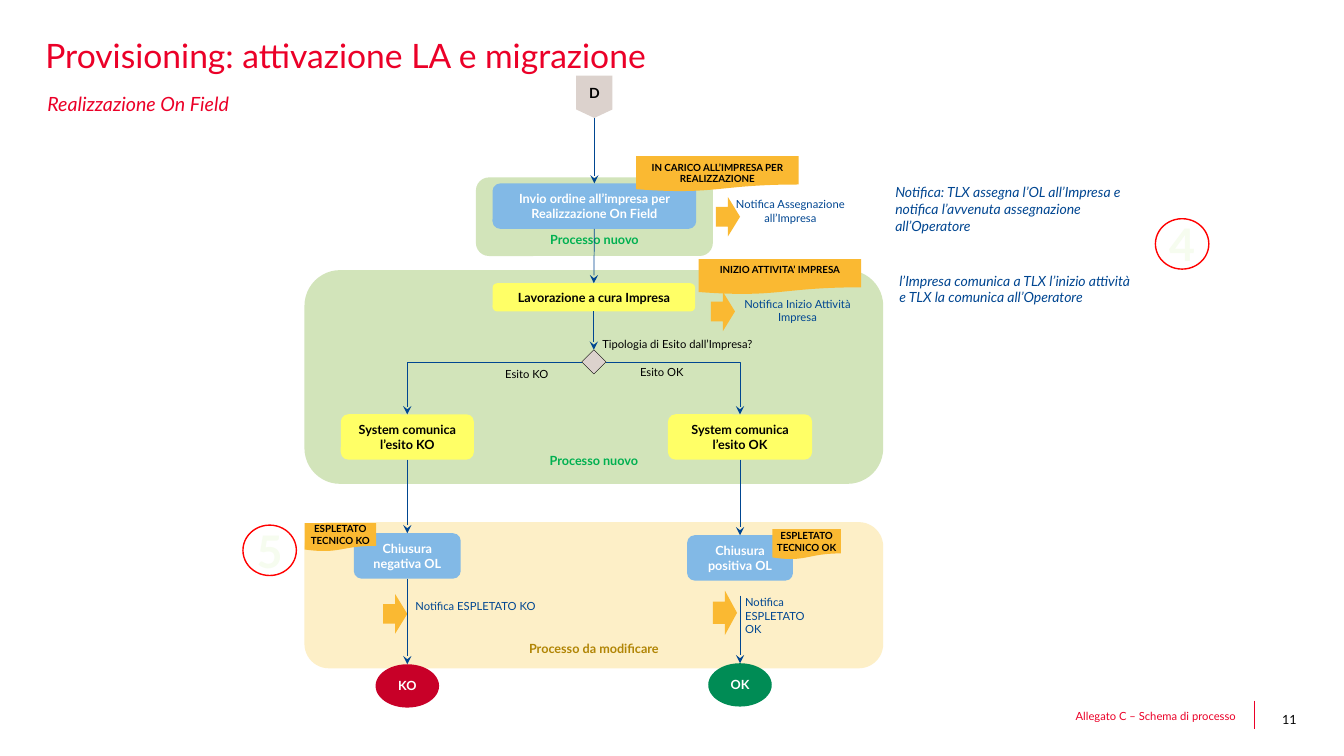
from collections import namedtuple
from lxml import etree
from pptx import Presentation
from pptx.dml.color import RGBColor
from pptx.enum.shapes import MSO_CONNECTOR, MSO_SHAPE
from pptx.enum.text import MSO_ANCHOR, PP_ALIGN
from pptx.oxml.ns import qn
from pptx.util import Inches, Pt

RED = RGBColor(0xEB, 0x00, 0x28)
DARK_RED = RGBColor(0xC8, 0x00, 0x28)
RING_RED = RGBColor(0xFF, 0x00, 0x00)
NAVY = RGBColor(0x00, 0x46, 0x91)
SKY = RGBColor(0x82, 0xB9, 0xE6)
YELLOW = RGBColor(0xFF, 0xFF, 0x66)
ORANGE = RGBColor(0xFA, 0xB9, 0x32)
SAND = RGBColor(0xFD, 0xEF, 0xC7)
OCHRE = RGBColor(0xB1, 0x85, 0x05)
PALE_GREEN = RGBColor(0xD2, 0xE4, 0xBA)
MINT = RGBColor(0xF6, 0xFC, 0xEF)
GREEN = RGBColor(0x00, 0xB0, 0x50)
DARK_GREEN = RGBColor(0x00, 0x8C, 0x55)
STONE = RGBColor(0xDC, 0xD2, 0xCD)
BLACK = RGBColor(0x00, 0x00, 0x00)
WHITE = RGBColor(0xFF, 0xFF, 0xFF)

FONT = "Lato"
TOP, LEFT, BOTTOM, RIGHT = range(4)
KO_AXIS, MAIN_AXIS, OK_AXIS = 1.02, 2.87, 4.32
Box = namedtuple("Box", "left top width height")


def write(shape, text, size, color, align=PP_ALIGN.CENTER, bold=False, italic=False,
          anchor=MSO_ANCHOR.MIDDLE, margins=(0.1, 0.05), wrap=True):
    frame = shape.text_frame
    frame.text = text
    frame.word_wrap = wrap
    frame.vertical_anchor = anchor
    frame.margin_left = frame.margin_right = Inches(margins[0])
    frame.margin_top = frame.margin_bottom = Inches(margins[1])
    for para in frame.paragraphs:
        para.alignment = align
        for span in para.runs:
            span.font.name = FONT
            span.font.size = Pt(size)
            span.font.bold = bold
            span.font.italic = italic
            span.font.color.rgb = color


def add_label(page, box, text, size, color, align=PP_ALIGN.LEFT, italic=False):
    label = page.shapes.add_textbox(*map(Inches, box))
    write(label, text, size, color, align, italic=italic, anchor=MSO_ANCHOR.TOP, margins=(0, 0))
    return label


def add_figure(page, kind, box, fill=None):
    figure = page.shapes.add_shape(kind, *map(Inches, box))
    figure.shadow.inherit = False
    figure.line.fill.background()
    if fill is None:
        figure.fill.background()
    else:
        figure.fill.solid()
        figure.fill.fore_color.rgb = fill
    return figure


def add_node(page, axis, top, width, height, text, fill, color, kind=MSO_SHAPE.ROUNDED_RECTANGLE, size=9):
    node = add_figure(page, kind, (axis - width / 2, top, width, height), fill)
    write(node, text, size, color, bold=True)
    return node


def add_band(page, box, text, fill, color):
    band = add_figure(page, MSO_SHAPE.ROUNDED_RECTANGLE, box, fill)
    write(band, text, 9, color, bold=True, anchor=MSO_ANCHOR.BOTTOM)


def add_status(page, box, text, anchor=MSO_ANCHOR.MIDDLE):
    status = add_figure(page, MSO_SHAPE.FLOWCHART_DOCUMENT, box, ORANGE)
    write(status, text, 7, BLACK, bold=True, anchor=anchor, margins=(0, 0.05))


def add_notice(page, center, middle, label_box, text, align=PP_ALIGN.CENTER, height=0.39):
    add_figure(page, MSO_SHAPE.RIGHT_ARROW, (center - 0.12, middle - height / 2, 0.24, height), ORANGE)
    add_label(page, label_box, text, 8, NAVY, align)


def add_line(page, start, end, color=NAVY, kind=MSO_CONNECTOR.STRAIGHT):
    line = page.shapes.add_connector(kind, *map(Inches, start + end))
    line.line.color.rgb = color
    line.line.width = Pt(0.5)
    etree.SubElement(line._element.spPr, qn("a:effectLst"))
    return line


def add_flow(page, source, target, side=BOTTOM, start=(0, 0)):
    kind = MSO_CONNECTOR.STRAIGHT if side == BOTTOM else MSO_CONNECTOR.ELBOW
    flow = add_line(page, start, (0, 0), kind=kind)
    if source is not None:
        flow.begin_connect(source, side)
    flow.end_connect(target, TOP)
    if side != BOTTOM:
        flow._element.spPr.find(qn("a:prstGeom")).set("prst", "bentConnector2")
    outline = flow._element.spPr.find(qn("a:ln"))
    etree.SubElement(outline, qn("a:tailEnd"), type="stealth")


def add_step_number(page, box, digit):
    ring = add_figure(page, MSO_SHAPE.OVAL, box)
    ring.line.color.rgb = RING_RED
    ring.line.width = Pt(1)
    write(ring, digit, 32, MINT, bold=True, margins=(0, 0), wrap=False)
    outline = etree.Element(qn("a:ln"), w=str(Pt(2.48)))
    fill = etree.SubElement(outline, qn("a:solidFill"))
    etree.SubElement(fill, qn("a:srgbClr"), val="88B350")
    ring.text_frame.paragraphs[0].runs[0].font._element.insert(0, outline)


def add_heading(page, box):
    title = add_label(page, (box.left, box.top, box.width, 0.39),
                      "Provisioning: attivazione LA e migrazione", 24, RED)
    title.text_frame.paragraphs[0].line_spacing = 0.9
    add_label(page, (box.left + 0.02, box.top + 0.52, 7, 0.24), "Realizzazione On Field", 14, RED, italic=True)


def add_assignment(page, box):
    x, y = box.left, box.top
    axis = x + box.width / 2
    add_band(page, box, "Processo nuovo", PALE_GREEN, GREEN)
    entry = add_node(page, axis, y - 1.01, 0.36, 0.42, "D", STONE, BLACK,
                     MSO_SHAPE.FLOWCHART_OFFPAGE_CONNECTOR, 10)
    entry.text_frame.margin_left = entry.text_frame.margin_right = 0
    order = add_node(page, axis, y + 0.06, 2.02, 0.45,
                     "Invio ordine all’impresa per Realizzazione On Field", SKY, WHITE)
    add_flow(page, entry, order)
    add_notice(page, x + 2.5, y + 0.39, (x + 2.35, y + 0.2, 1.54, 0.27),
               "Notifica Assegnazione all’Impresa")
    add_status(page, (x + 1.59, y - 0.21, 1.61, 0.35),
               "IN CARICO ALL’IMPRESA PER REALIZZAZIONE", MSO_ANCHOR.TOP)
    return order


def add_execution(page, box, order):
    x, y = box.left, box.top
    add_band(page, box, "Processo nuovo", PALE_GREEN, GREEN)
    work = add_node(page, x + MAIN_AXIS, y + 0.13, 2.01, 0.28, "Lavorazione a cura Impresa", YELLOW, BLACK)
    choice = add_figure(page, MSO_SHAPE.FLOWCHART_DECISION,
                        (x + MAIN_AXIS - 0.12, y + 0.79, 0.24, 0.24), STONE)
    choice.line.color.rgb = BLACK
    choice.line.width = Pt(0.25)
    failed = add_node(page, x + KO_AXIS, y + 1.43, 1.32, 0.45, "System comunica l’esito KO", YELLOW, BLACK)
    passed = add_node(page, x + OK_AXIS, y + 1.43, 1.43, 0.45, "System comunica l’esito OK", YELLOW, BLACK)
    add_flow(page, order, work)
    add_flow(page, work, choice)
    add_flow(page, choice, failed, LEFT)
    add_flow(page, choice, passed, RIGHT)
    for left, top, width, text in ((2.94, 0.67, 1.52, "Tipologia di Esito dall’Impresa?"),
                                   (3.18, 0.94, 0.73, "Esito OK"),
                                   (1.84, 0.96, 0.73, "Esito KO")):
        add_label(page, (x + left, y + top, width, 0.13), text, 8, BLACK, PP_ALIGN.CENTER)
    add_notice(page, x + 4.15, y + 0.41, (x + 4.33, y + 0.27, 1.12, 0.27),
               "Notifica Inizio Attività Impresa")
    add_status(page, (x + 3.91, y - 0.11, 1.61, 0.35), "INIZIO ATTIVITA’ IMPRESA", MSO_ANCHOR.TOP)
    return failed, passed


def add_closure(page, box, failed, passed):
    x, y = box.left, box.top
    add_band(page, box, "Processo da modificare", SAND, OCHRE)
    refusal = add_node(page, x + KO_AXIS, y + 0.11, 1.06, 0.45, "Chiusura negativa OL", SKY, WHITE)
    success = add_node(page, x + OK_AXIS, y + 0.13, 1.05, 0.45, "Chiusura\npositiva OL", SKY, WHITE)
    add_notice(page, x + 0.9, y + 0.91, (x + 1.1, y + 0.77, 1.53, 0.13),
               "Notifica ESPLETATO KO", PP_ALIGN.LEFT)
    add_notice(page, x + 4.17, y + 0.9, (x + 4.37, y + 0.73, 0.77, 0.27),
               "Notifica ESPLETATO OK", PP_ALIGN.LEFT, 0.44)
    end_failed = add_node(page, x + KO_AXIS, y + 1.41, 0.63, 0.43, "KO", DARK_RED, WHITE,
                          MSO_SHAPE.FLOWCHART_CONNECTOR)
    end_passed = add_node(page, x + OK_AXIS, y + 1.4, 0.63, 0.43, "OK", DARK_GREEN, WHITE,
                          MSO_SHAPE.FLOWCHART_CONNECTOR)
    add_flow(page, failed, refusal)
    add_flow(page, passed, success)
    add_flow(page, refusal, end_failed)
    add_flow(page, None, end_passed, start=(x + OK_AXIS, y + 0.73))
    add_status(page, (x, y + 0.01, 0.71, 0.28), "ESPLETATO TECNICO KO")
    add_status(page, (x + 4.64, y + 0.07, 0.68, 0.3), "ESPLETATO TECNICO OK")
    add_step_number(page, (x - 0.61, y + 0.03, 0.53, 0.5), "5")


def add_remarks(page, box):
    x, y = box.left, box.top
    add_label(page, (x, y, 2.4, 0.5),
              "Notifica: TLX assegna l’OL all’Impresa e notifica l’avvenuta assegnazione all’Operatore",
              10, NAVY, italic=True)
    add_label(page, (x + 0.04, y + 0.88, 2.87, 0.34),
              "l’Impresa comunica a TLX l’inizio attività\ne TLX la comunica all’Operatore",
              10, NAVY, italic=True)
    add_step_number(page, (x + 2.58, y + 0.35, 0.53, 0.5), "4")


def add_footer(page, box):
    x, y = box.left, box.top
    add_label(page, (x, y + 0.09, 6.12, 0.15), "Allegato C – Schema di processo", 8, RED, PP_ALIGN.RIGHT)
    add_line(page, (x + 6.3, y), (x + 6.3, y + box.height), RED)
    add_label(page, (x + 6.21, y + 0.11, 0.51, 0.15), "11", 9, BLACK, PP_ALIGN.RIGHT)


def main():
    deck = Presentation()
    deck.slide_width, deck.slide_height = Inches(13.33), Inches(7.5)
    page = deck.slides.add_slide(deck.slide_layouts[6])
    add_heading(page, Box(0.45, 0.39, 12.34, 0.8))
    order = add_assignment(page, Box(4.72, 1.76, 2.35, 0.78))
    failed, passed = add_execution(page, Box(3.02, 2.68, 5.74, 2.12), order)
    add_closure(page, Box(3.02, 5.18, 5.74, 1.45), failed, passed)
    add_remarks(page, Box(8.88, 1.82, 3.11, 1.22))
    add_footer(page, Box(6.14, 6.95, 6.82, 0.28))
    deck.save("out.pptx")


if __name__ == "__main__":
    main()
